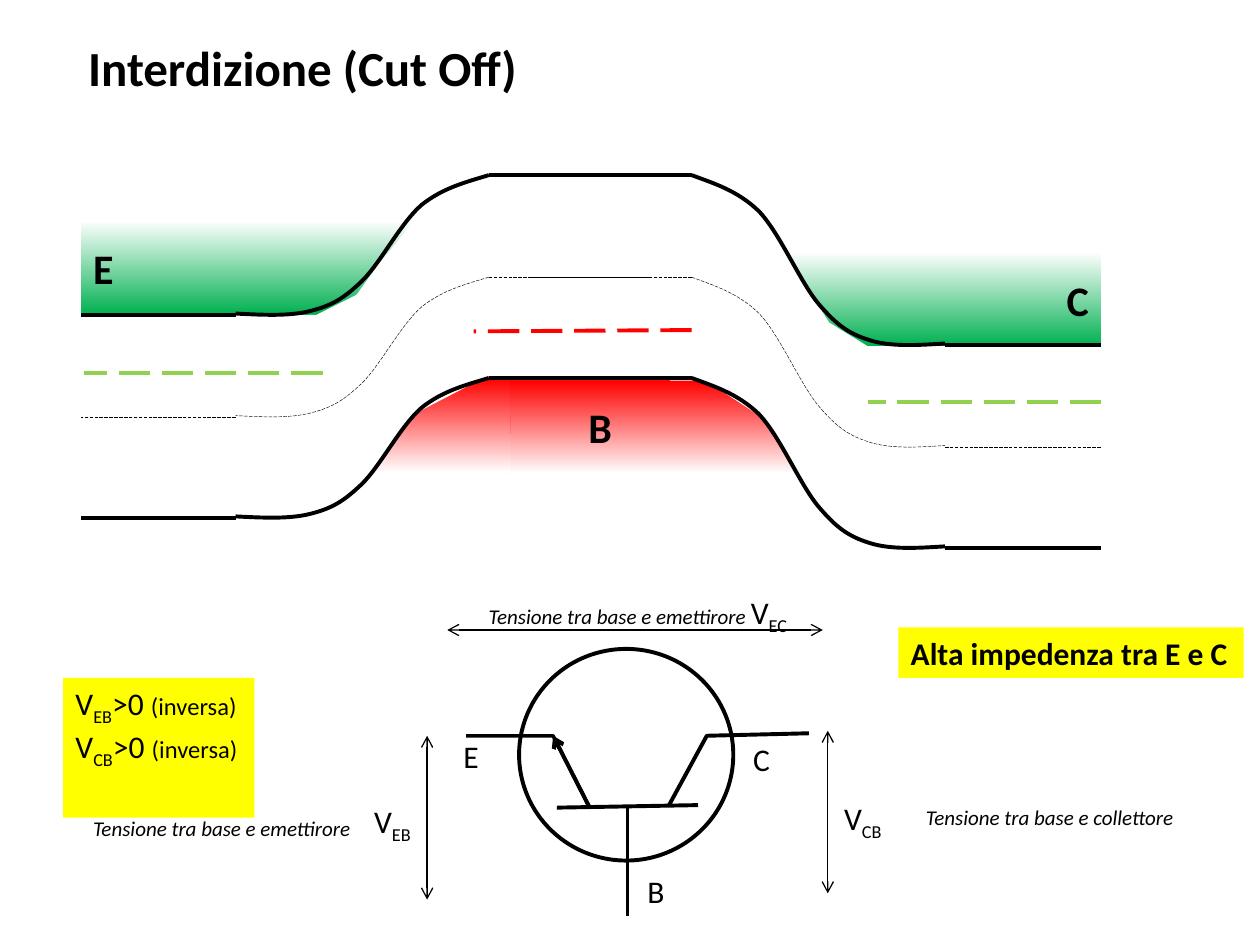
from dataclasses import dataclass
from typing import Optional

from lxml.etree import SubElement
from pptx import Presentation
from pptx.dml.color import RGBColor
from pptx.enum.dml import MSO_LINE
from pptx.enum.shapes import MSO_CONNECTOR, MSO_SHAPE
from pptx.enum.text import MSO_ANCHOR, MSO_AUTO_SIZE, PP_ALIGN
from pptx.oxml.ns import qn
from pptx.util import Cm, Pt

BLACK, WHITE, RED = "000000", "FFFFFF", "FF0000"
GREEN, LIME, YELLOW = "00B050", "92D050", "FFFF00"
DOWN, UP = 270, 90


@dataclass
class Stroke:
    color: str = BLACK
    width: float = 2.25
    dashed: bool = False


@dataclass
class Span:
    text: str
    size: int = 18
    bold: bool = False
    italic: bool = False
    subscript: bool = False


@dataclass
class Label:
    box: tuple
    paragraphs: list
    fill: Optional[str] = None
    wrap: bool = False


@dataclass
class Region:
    points: list
    color: str = WHITE
    angle: Optional[int] = None
    text: str = ""
    indent: float = 0.1


@dataclass
class Line:
    start: tuple
    end: tuple
    stroke: Stroke
    arrows: tuple = ()


@dataclass
class Junction:
    base_x: float
    base_end: float
    direction: int
    outer_end: float
    drop: float


SOLID, THIN, FINE_DASH = Stroke(), Stroke(width=0.75), Stroke(width=0.25, dashed=True)
LIME_DASH, RED_DASH = Stroke(LIME, dashed=True), Stroke(RED, dashed=True)
BOTH_ENDS = ("headEnd", "tailEnd")

# Bezier points of one band edge: distance from the base, share of the drop
BAND_CURVE = [(0, 0), (0.18, 0.05), (0.36, 0.09), (0.53, 0.21), (0.7, 0.34), (0.86, 0.63),
              (1.01, 0.76), (1.15, 0.88), (1.24, 0.93), (1.41, 0.97), (1.58, 1.01),
              (1.79, 1), (2.01, 0.99)]
BANDS = [(3, SOLID), (2.2, FINE_DASH), (1.39, SOLID)]
JUNCTIONS = [Junction(5.49, 4.21, 1, 8.74, 1.35), Junction(3.88, 5.16, -1, 0.64, 1.11)]

VALENCE_REGIONS = [
    Region([(2.36, 3.75), (5.3, 3.75), (5.32, 3.02), (3.85, 3), (3.35, 3.15), (2.97, 3.47),
            (2.79, 3.64), (2.47, 3.75)], RED, DOWN),
    Region([(3.84, 3), (0.58, 3), (0.58, 4.14), (2.37, 4.14), (2.7, 3.99), (2.91, 3.85),
            (3.1, 3.54), (3.28, 3.29), (3.57, 3.14)]),
    Region([(7, 3.76), (4.06, 3.76), (4.05, 3.03), (5.52, 3.02), (6.02, 3.17), (6.39, 3.49),
            (6.58, 3.65), (6.89, 3.76)], RED, DOWN, "B", 0.62),
    Region([(5.5, 2.97), (8.76, 2.97), (8.76, 4.36), (6.97, 4.36), (6.64, 4.17), (6.42, 4.01),
            (6.24, 3.62), (6.06, 3.32), (5.77, 3.13)]),
]
CONDUCTION_BOXES = [((4.38, 2, 4.36, 0.75), "C", PP_ALIGN.RIGHT),
                    ((0.64, 1.75, 4.36, 0.75), "E", PP_ALIGN.LEFT)]
CONDUCTION_MASKS = [
    Region([(2.41, 2.5), (5.35, 2.5), (5.36, 1.42), (3.89, 1.4), (3.39, 1.63), (3.01, 2.09),
            (2.83, 2.34), (2.51, 2.5)]),
    Region([(7, 2.75), (4.06, 2.75), (4.05, 1.44), (5.52, 1.41), (6.02, 1.68), (6.39, 2.26),
            (6.58, 2.56), (6.89, 2.75)]),
]
LINES = [
    Line((2.56, 2.96), (0.67, 2.96), LIME_DASH),
    Line((8.74, 3.19), (6.89, 3.19), LIME_DASH),
    Line((5.49, 2.62), (3.76, 2.63), RED_DASH),
    Line((4.42, 6.41), (5.54, 6.39), SOLID),
    Line((4.98, 6.39), (4.98, 7.27), SOLID),
    Line((4.68, 6.41), (4.39, 5.84), SOLID, ("tailEnd",)),
    Line((3.39, 5.84), (3.39, 7.14), THIN, BOTH_ENDS),
    Line((6.57, 5.8), (6.57, 7.09), THIN, BOTH_ENDS),
    Line((6.53, 5), (3.55, 5), THIN, BOTH_ENDS),
]
COLLECTOR_LEAD = [(5.31, 6.39), (5.61, 5.84), (6.42, 5.82)]
EMITTER_LEAD = [(4.68, 6.41), (4.39, 5.84), (3.7, 5.84)]


def voltage(name: str) -> list:
    return [Span("V"), Span(name, subscript=True)]


def reverse_biased(name: str) -> list:
    return voltage(name) + [Span(">0 "), Span("(inversa)", 14)]


LABELS = [
    Label((3.58, 5.8, 0.32, 0.49), [[Span("E")]]),
    Label((5.88, 5.82, 0.34, 0.49), [[Span("C")]]),
    Label((5.04, 6.87, 0.34, 0.49), [[Span("B")]]),
    Label((0.5, 5.38, 1.52, 1.11), [reverse_biased("EB"), reverse_biased("CB")], YELLOW),
    Label((6.6, 6.29, 0.52, 0.4), [voltage("CB")]),
    Label((7.25, 6.34, 2.28, 0.3),
          [[Span("Tensione tra base e collettore", 12, italic=True)]], wrap=True),
    Label((0.64, 6.42, 2.28, 0.3),
          [[Span("Tensione tra base e emettirore", 12, italic=True)]], wrap=True),
    Label((3.78, 4.66, 3.16, 0.61),
          [[Span("Tensione tra base e emettirore ", 12, italic=True)] + voltage("EC")], wrap=True),
    Label((7.13, 4.98, 2.74, 0.4), [[Span("Alta impedenza tra E e C", bold=True)]], YELLOW),
    Label((2.87, 6.32, 0.52, 0.4), [voltage("EB")]),
]


def inches(*values: float) -> list:
    return [Cm(value * 2.54) for value in values]


def rgb(color: str) -> RGBColor:
    return RGBColor.from_string(color)


def apply(target, values: dict) -> None:
    for name, value in values.items():
        setattr(target, name, value)


def write(para, spans: list) -> None:
    for item in spans:
        span = para.add_run()
        span.text = item.text
        apply(span.font, {"name": "Calibri", "size": Pt(item.size),
                          "bold": item.bold, "italic": item.italic})
        span.font.color.rgb = rgb(BLACK)
        if item.subscript:
            span.font._element.set("baseline", "-25000")


def set_stroke(line, stroke: Stroke) -> None:
    line.color.rgb = rgb(stroke.color)
    line.width = Pt(stroke.width)
    if stroke.dashed:
        line.dash_style = MSO_LINE.LONG_DASH


def set_fill(shape, color: str, angle: Optional[int] = None) -> None:
    """Fill plainly, or fade to white along the angle when one is given."""
    shape.shadow.inherit = False
    shape.line.fill.background()
    if angle is None:
        shape.fill.solid()
        shape.fill.fore_color.rgb = rgb(color)
        return
    shape.fill.gradient()
    shape.fill.gradient_angle = angle
    for stop, (position, tint) in zip(shape.fill.gradient_stops, [(0, color), (1, WHITE)]):
        stop.position, stop.color.rgb = position, rgb(tint)


def draw_outline(page, points: list, close: bool):
    corners = [tuple(inches(*point)) for point in points]
    builder = page.shapes.build_freeform(*corners[0])
    builder.add_line_segments(corners[1:], close=close)
    return builder.convert_to_shape()


def bend(shape) -> None:
    """Join each three straight segments into one cubic Bezier segment."""
    segments = list(shape._element.iter(qn("a:lnTo")))
    for first, second, third in zip(segments[::3], segments[1::3], segments[2::3]):
        first.tag = qn("a:cubicBezTo")
        for extra in (second, third):
            first.append(extra[0])
            extra.getparent().remove(extra)


def set_open(shape, stroke: Stroke) -> None:
    """Leave the shape unfilled, with only its stroke."""
    shape.shadow.inherit = False
    shape.fill.background()
    set_stroke(shape.line, stroke)


def caption(shape, text: str, alignment) -> None:
    shape.text_frame.vertical_anchor = MSO_ANCHOR.MIDDLE
    para = shape.text_frame.paragraphs[0]
    para.alignment = alignment
    write(para, [Span(text, 24, bold=True)])


def draw_region(page, region: Region) -> None:
    shape = draw_outline(page, region.points, True)
    set_fill(shape, region.color, region.angle)
    if region.text:
        shape.text_frame.margin_left = inches(region.indent)[0]
        caption(shape, region.text, PP_ALIGN.LEFT)


def draw_line(page, item: Line) -> None:
    connector = page.shapes.add_connector(MSO_CONNECTOR.STRAIGHT, *inches(*item.start, *item.end))
    set_stroke(connector.line, item.stroke)
    for end in item.arrows:
        SubElement(connector.line._get_or_add_ln(), qn(f"a:{end}"), type="arrow")
    SubElement(connector._element.spPr, qn("a:effectLst"))


def draw_band(page, side: Junction, level: float, stroke: Stroke) -> None:
    curve = [(side.base_x + side.direction * x, level + side.drop * y) for x, y in BAND_CURVE]
    edge = draw_outline(page, curve, False)
    bend(edge)
    set_open(edge, stroke)
    low = level + side.drop
    draw_line(page, Line((curve[-1][0], low), (side.outer_end, low), stroke))
    draw_line(page, Line((side.base_x, level), (side.base_end, level), stroke))


def draw_label(page, label: Label) -> None:
    box = page.shapes.add_textbox(*inches(*label.box))
    apply(box.text_frame, {"word_wrap": label.wrap, "auto_size": MSO_AUTO_SIZE.NONE})
    if label.fill:
        set_fill(box, label.fill)
    for index, spans in enumerate(label.paragraphs):
        para = box.text_frame.add_paragraph() if index else box.text_frame.paragraphs[0]
        write(para, spans)


def main() -> None:
    deck = Presentation()
    deck.slide_width, deck.slide_height = inches(10, 7.5)
    page = deck.slides.add_slide(deck.slide_layouts[5])

    title = page.shapes.title
    apply(title, dict(zip(("left", "top", "width", "height"), inches(0.6, 0.25, 3.66, 0.57))))
    apply(title.text_frame, {"word_wrap": False, "auto_size": MSO_AUTO_SIZE.NONE,
                             "vertical_anchor": MSO_ANCHOR.TOP})
    heading = title.text_frame.paragraphs[0]
    heading.alignment = PP_ALIGN.LEFT
    write(heading, [Span("Interdizione (Cut Off)", 28, bold=True)])

    for region in VALENCE_REGIONS:
        draw_region(page, region)
    for place, text, alignment in CONDUCTION_BOXES:
        box = page.shapes.add_shape(MSO_SHAPE.RECTANGLE, *inches(*place))
        set_fill(box, GREEN, UP)
        caption(box, text, alignment)
    for region in CONDUCTION_MASKS:
        draw_region(page, region)
    for side in JUNCTIONS:
        for level, stroke in BANDS:
            draw_band(page, side, level, stroke)

    set_open(page.shapes.add_shape(MSO_SHAPE.OVAL, *inches(4.12, 5.15, 1.7, 1.68)), SOLID)
    for lead, stroke in [(COLLECTOR_LEAD, SOLID), (EMITTER_LEAD, Stroke(width=2))]:
        set_open(draw_outline(page, lead, False), stroke)
    for label in LABELS:
        draw_label(page, label)
    for line in LINES:
        draw_line(page, line)
    deck.save("out.pptx")


if __name__ == "__main__":
    main()
